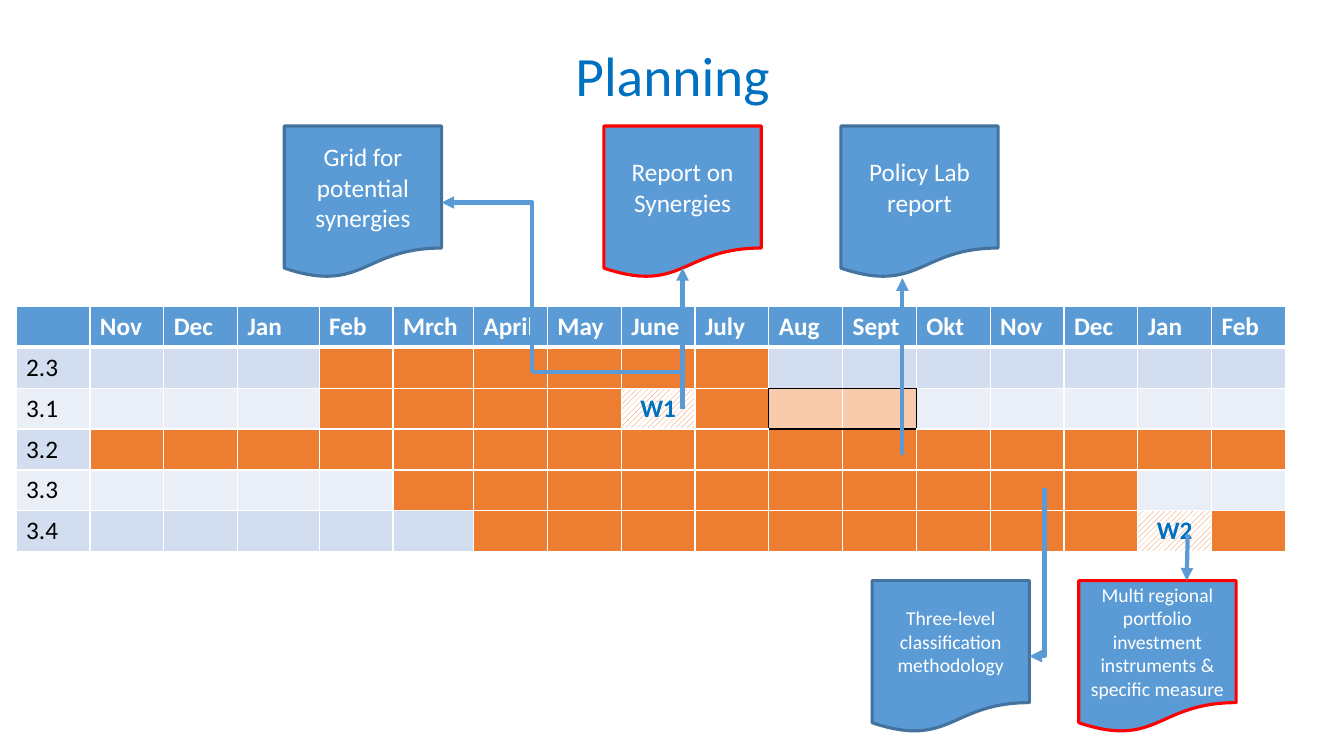
from lxml.etree import SubElement
from pptx import Presentation
from pptx.dml.color import RGBColor as Rgb
from pptx.enum.dml import MSO_PATTERN as Pattern
from pptx.enum.shapes import MSO_CONNECTOR as Link, MSO_SHAPE as Shape
from pptx.enum.text import MSO_ANCHOR as Anchor, MSO_AUTO_SIZE as Fit, PP_ALIGN as Align
from pptx.oxml.ns import qn
from pptx.util import Inches, Pt

BLUE, ORANGE, PEACH, WHITE = "5B9BD5", "ED7D31", "F8CBAD", "FFFFFF"
NAVY, RED, TITLE, BLACK = "43739E", "FF0000", "0070C0", "000000"
BANDS = ["D2DEEF", "EAEFF7"]
MONTHS = "Nov Dec Jan Feb Mrch April May June July Aug Sept Okt Nov Dec Jan Feb".split()
TASKS = [("2.3", 4, 9), ("3.1", 4, 9), ("3.2", 1, 16), ("3.3", 5, 14), ("3.4", 6, 16)]
MARKS = {(2, 8): "W1", (5, 15): "W2"}
FRAME = {(2, 10), (2, 11)}
SIDES = [("a:lnL", 0, -1), ("a:lnR", 0, 1), ("a:lnT", -1, 0), ("a:lnB", 1, 0)]


def tint(code):
    """Turn a hex string into a colour."""
    return Rgb.from_string(code)


def write(frame, text, size, color, bold=False, align=Align.LEFT):
    """Add one styled run to the first paragraph of a frame."""
    par = frame.paragraphs[0]
    par.alignment = align
    run = par.add_run()
    run.text = text
    font = run.font
    font.name, font.size, font.bold = "Calibri", Pt(size), bold
    font.color.rgb = tint(color)
    return par


def head(slide, left, top, width, height):
    """Place the slide title in its box."""
    title = slide.shapes.title
    title.left, title.top = Inches(left), Inches(top)
    title.width, title.height = Inches(width), Inches(height)
    frame = title.text_frame
    frame.auto_size, frame.vertical_anchor = Fit.NONE, Anchor.MIDDLE
    write(frame, "Planning", 39.6, TITLE, align=Align.CENTER).line_spacing = 0.9


def edge(cell, row, col):
    """Draw the four borders of a cell."""
    props = cell._tc.get_or_add_tcPr()
    for spot, (tag, down, right) in enumerate(SIDES):
        near = (row + down, col + right)
        thick = {row, near[0]} == {0, 1}
        dark = ((row, col) in FRAME) != (near in FRAME)
        line = SubElement(props, qn(tag), w=str(Pt(3 if thick else 1)))
        fill = SubElement(line, qn("a:solidFill"))
        SubElement(fill, qn("a:srgbClr"), val=BLACK if dark else WHITE)
        props.insert(spot, line)


def paint(cell, row, col):
    """Fill a cell according to the plan."""
    fill = cell.fill
    if (row, col) in MARKS:
        fill.patterned()
        fill.pattern = Pattern.WIDE_UPWARD_DIAGONAL
        fill.fore_color.rgb, fill.back_color.rgb = tint(ORANGE), tint(WHITE)
        return
    if row == 0:
        color = BLUE
    elif (row, col) in FRAME:
        color = PEACH
    elif TASKS[row - 1][1] <= col <= TASKS[row - 1][2]:
        color = ORANGE
    else:
        color = BANDS[(row - 1) % 2]
    fill.solid()
    fill.fore_color.rgb = tint(color)


def chart(slide, left, top, width, height):
    """Build the month table with its task bars."""
    rows, cols = len(TASKS) + 1, len(MONTHS) + 1
    table = slide.shapes.add_table(rows, cols, Inches(left), Inches(top),
                                   Inches(width), Inches(height)).table
    wide = {3: 0.81, 5: 0.8}
    rest = (width - sum(wide.values())) / (cols - len(wide))
    for col in range(cols):
        table.columns[col].width = Inches(wide.get(col, rest))
    for row in range(rows):
        for col in range(cols):
            cell = table.cell(row, col)
            paint(cell, row, col)
            edge(cell, row, col)
            if (row, col) in MARKS:
                write(cell.text_frame, MARKS[row, col], 18, TITLE, True, Align.CENTER)
            elif row == 0 and col:
                write(cell.text_frame, MONTHS[col - 1], 18, WHITE, True)
            elif row and col == 0:
                write(cell.text_frame, TASKS[row - 1][0], 18, BLACK)


def paper(slide, left, top, text, size, line):
    """Add a document shape with its caption."""
    doc = slide.shapes.add_shape(Shape.FLOWCHART_DOCUMENT, Inches(left), Inches(top),
                                 Inches(1.56), Inches(1.51))
    doc.shadow.inherit = False
    doc.fill.solid()
    doc.fill.fore_color.rgb = tint(BLUE)
    doc.line.color.rgb, doc.line.width = tint(line), Pt(2.25)
    frame = doc.text_frame
    frame.word_wrap, frame.vertical_anchor = True, Anchor.MIDDLE
    write(frame, text, size, WHITE, align=Align.CENTER)
    return doc


def wire(slide, start, end, kind=Link.STRAIGHT, tip=True):
    """Add a blue line, with an arrowhead if wanted."""
    link = slide.shapes.add_connector(kind, *map(Inches, start + end))
    link.line.color.rgb, link.line.width = tint(BLUE), Pt(3)
    if tip:
        SubElement(link.line._get_or_add_ln(), qn("a:tailEnd"), type="triangle")
    SubElement(link.element.spPr, qn("a:effectLst"))
    return link


def bend(slide, start, end):
    """Add an arrow that runs upright first, then level."""
    (left, top), (right, low) = start, end
    midx, midy = (left + right) / 2, (top + low) / 2
    wide, high = abs(low - top) / 2, abs(right - left) / 2
    if (low > top) == (right > left):
        high = -high
    link = wire(slide, (midx - wide, midy - high), (midx + wide, midy + high), Link.ELBOW)
    props = link.element.spPr
    props.find(qn("a:prstGeom")).set("prst", "bentConnector2")
    props.find(qn("a:xfrm")).set("rot", str((90 if low > top else 270) * 60000))


def flow(slide):
    """Place the documents and link them to the table."""
    paper(slide, 2.82, 1.25, "Grid for potential synergies", 18, NAVY)
    report = paper(slide, 5.99, 1.25, "Report on Synergies", 18, RED)
    paper(slide, 8.34, 1.25, "Policy Lab report", 18, NAVY)
    paper(slide, 8.65, 5.76, "Three-level classification methodology", 14, NAVY)
    paper(slide, 10.7, 5.76,
          "Multi regional portfolio investment instruments & specific measure", 14, RED)
    bend(slide, (5.28, 3.69), (4.38, 2.01))
    link = wire(slide, (6.77, 4.06), (6.77, 2.66))
    link.end_connect(report, 2)
    link.end_y = Inches(2.66)
    bend(slide, (10.36, 4.84), (10.21, 6.51))
    wire(slide, (11.78, 5.3), (11.77, 5.76))
    wire(slide, (5.28, 3.69), (6.78, 3.69), tip=False)
    wire(slide, (8.95, 4.51), (8.95, 2.76))


def main():
    """Build and save the planning slide."""
    deck = Presentation()
    deck.slide_width, deck.slide_height = Inches(13.33), Inches(7.5)
    slide = deck.slides.add_slide(deck.slide_layouts[5])
    chart(slide, 0.16, 3.04, 12.59, 2.43)
    head(slide, 0.92, 0.4, 11.5, 0.76)
    flow(slide)
    deck.save("out.pptx")


if __name__ == "__main__":
    main()
